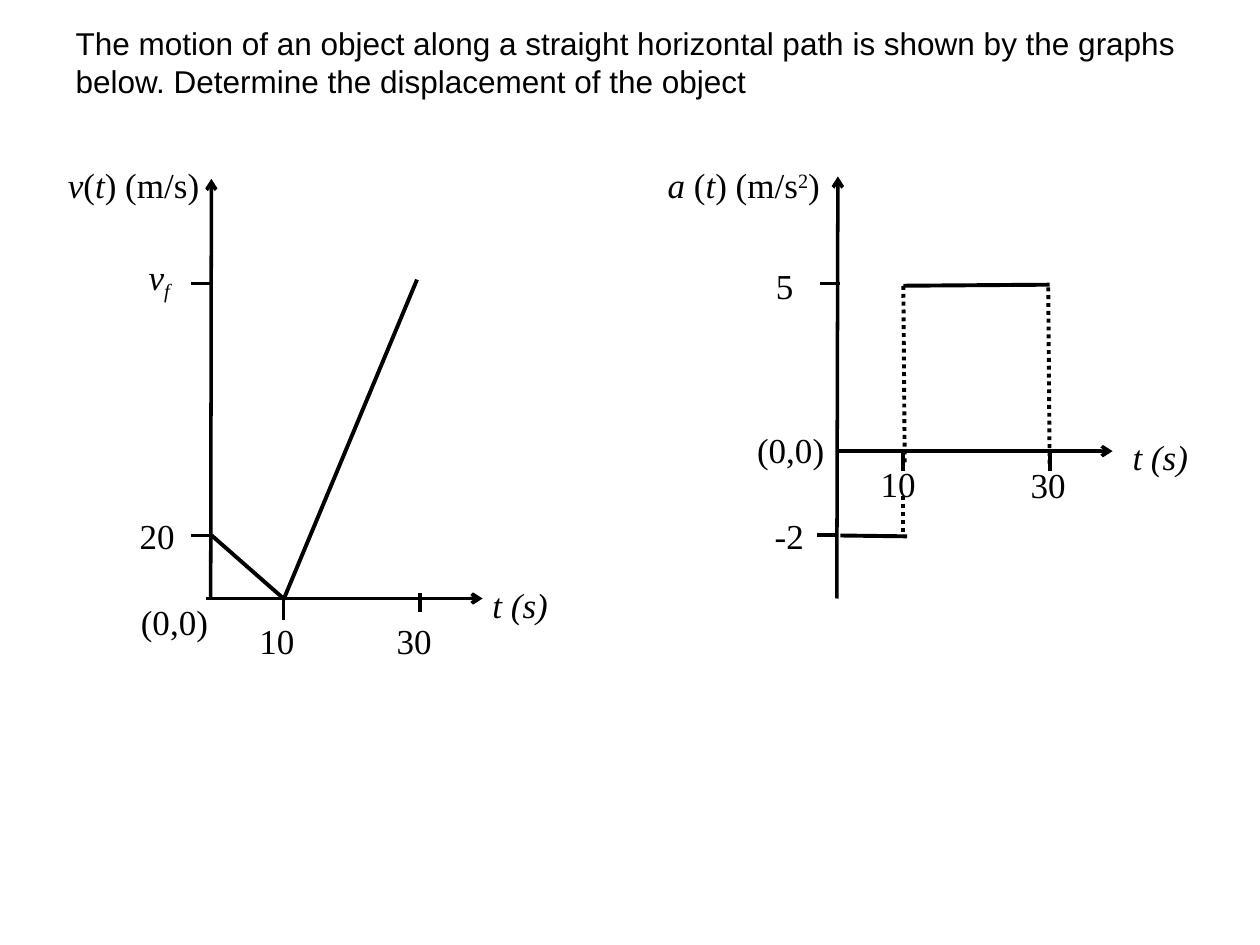
"""Build a slide with velocity and acceleration graphs of a moving object."""
import pptx
import pptx.dml.color
import pptx.enum.dml
import pptx.enum.shapes
import pptx.enum.text
import pptx.oxml.ns
import pptx.util
from lxml import etree

Pt = pptx.util.Pt
qn = pptx.oxml.ns.qn


def paint(font, tint="000000"):
    font.color.rgb = pptx.dml.color.RGBColor.from_string(tint)


def write(para, runs, face, size):
    for text, slant, shift in runs:
        run = para.add_run()
        run.text = text
        run.font.name = face
        run.font.size = Pt(size)
        run.font.bold = False
        run.font.italic = slant
        paint(run.font)
        if shift:
            run._r.get_or_add_rPr().set("baseline", str(shift * 1000))


deck = pptx.Presentation()
deck.slide_width, deck.slide_height = Pt(720), Pt(540)
slide = deck.slides.add_slide(deck.slide_layouts[5])

title = slide.shapes.title
title.left, title.top, title.width, title.height = Pt(36), Pt(10), Pt(654), Pt(51)
frame = title.text_frame
frame.word_wrap = True
frame.auto_size = pptx.enum.text.MSO_AUTO_SIZE.NONE
frame.vertical_anchor = pptx.enum.text.MSO_ANCHOR.TOP
frame.paragraphs[0].alignment = pptx.enum.text.PP_ALIGN.LEFT
ask = ("The motion of an object along a straight horizontal path is shown by the graphs "
       "below. Determine the displacement of the object")
write(frame.paragraphs[0], [(ask, False, 0)], "Arial", 18)

axes = [
    (120.4, 342.6, 120.8, 102.2), (118, 342, 275.8, 342),
    (478.2, 342, 478.8, 100.8), (478.2, 257.8, 635.8, 257.8),
]
ticks = [
    (239.8, 350, 239.8, 339.1), (162, 354.2, 162, 342.7),
    (109.4, 306, 120.2, 306), (109.4, 162, 120.2, 162),
    (468.7, 162, 480.2, 162), (466.6, 305.8, 478.8, 305.8),
    (516.2, 269.3, 516.2, 257.8), (599.8, 269.3, 599.8, 257.8),
]
plots = [
    (121, 306, 162, 342), (162, 342.7, 238.3, 159.8),
    (480.2, 306, 518.4, 306.5), (516.2, 163.3, 599.8, 162.7),
]
drops = [
    (517, 264.2, 516.2, 162), (516.2, 303.8, 516.2, 282.2), (599.8, 265, 599, 162.7),
]
for kind, group in (("drop", drops), ("plot", plots), ("tick", ticks), ("axis", axes)):
    for ends in group:
        line = slide.shapes.add_connector(
            pptx.enum.shapes.MSO_CONNECTOR.STRAIGHT, *map(Pt, ends))
        line.line.width = Pt(2 if kind == "axis" else 2.25)
        paint(line.line)
        if kind == "drop":
            line.line.dash_style = pptx.enum.dml.MSO_LINE.ROUND_DOT
        if kind == "axis":
            etree.SubElement(line.line._get_or_add_ln(), qn("a:tailEnd"), type="arrow")
        etree.SubElement(line._element.spPr, qn("a:effectLst"))

time = [("t (s)", True, 0)]
zero = [("(0,0)", False, 0)]
ten = [("10", False, 0)]
end = [("30", False, 0)]
speed = [("v", True, 0), ("(", False, 0), ("t", True, 0), (") (m/s)", False, 0)]
rate = [("a ", True, 0), ("(", False, 0), ("t", True, 0), (") (m/s", False, 0),
        ("2", False, 30), (")", False, 0)]
labels = [
    (31.7, 86.4, 106.6, 42.5, speed),
    (77.8, 138.2, 36.7, 43.9, [("v", True, 0), ("f", True, -25)]),
    (72.7, 286.6, 46.8, 43.9, [("20", False, 0)]),
    (73.4, 336.2, 76.4, 41.8, zero),
    (141.1, 347, 44.6, 43.2, ten),
    (219.6, 347, 44.6, 43.2, end),
    (274.3, 326.2, 61.2, 40.3, time),
    (374.4, 86.4, 123.1, 42.5, rate),
    (436.3, 144, 37.4, 38.9, [("5", False, 0)]),
    (435.6, 286.6, 38.2, 38.9, [("-2", False, 0)]),
    (425.5, 237.6, 66.3, 38.2, zero),
    (496.1, 257, 44.6, 28.8, ten),
    (581.8, 257.8, 44.6, 43.2, end),
    (640.1, 241.9, 57.6, 40.3, time),
]
for left, top, width, height, runs in labels:
    box = slide.shapes.add_textbox(Pt(left), Pt(top), Pt(width), Pt(height))
    box.text_frame.word_wrap = True
    para = box.text_frame.paragraphs[0]
    para.line_spacing = 1.15
    para.space_after = Pt(10)
    write(para, runs, "Times New Roman", 20)

deck.save("out.pptx")
